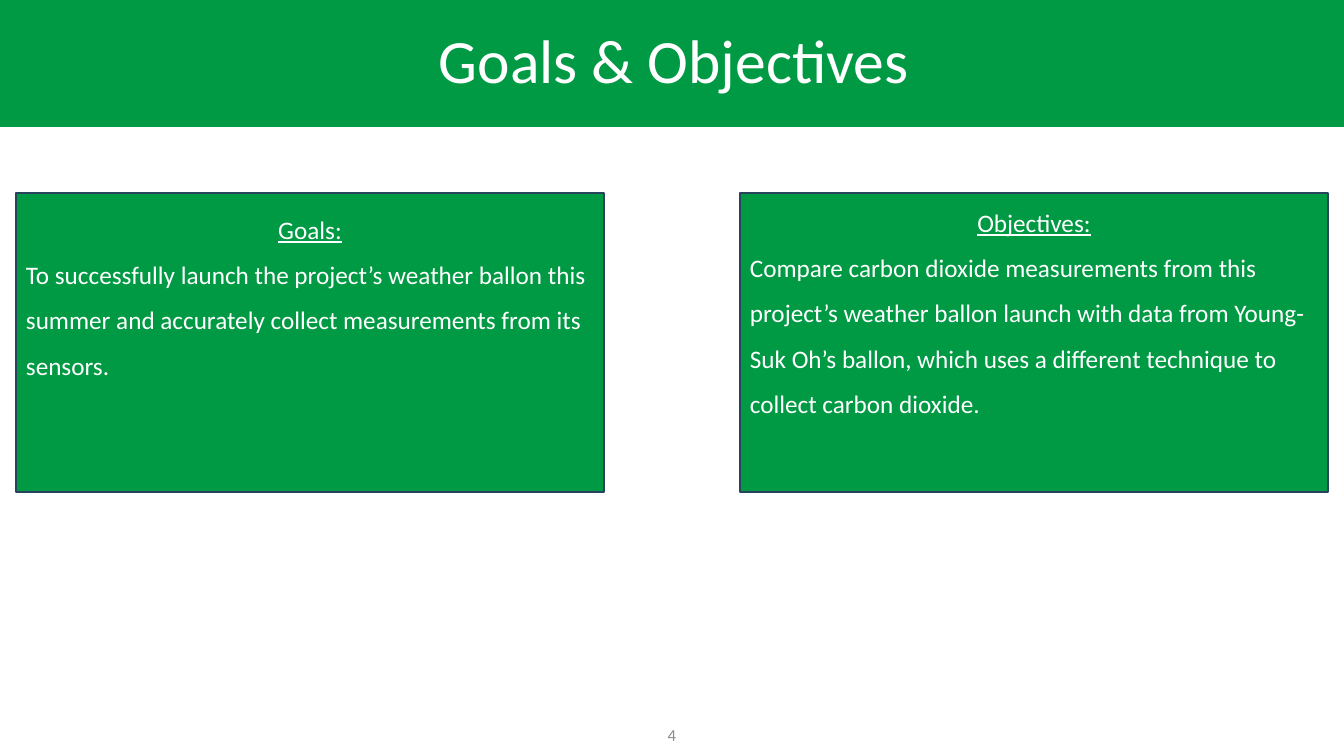
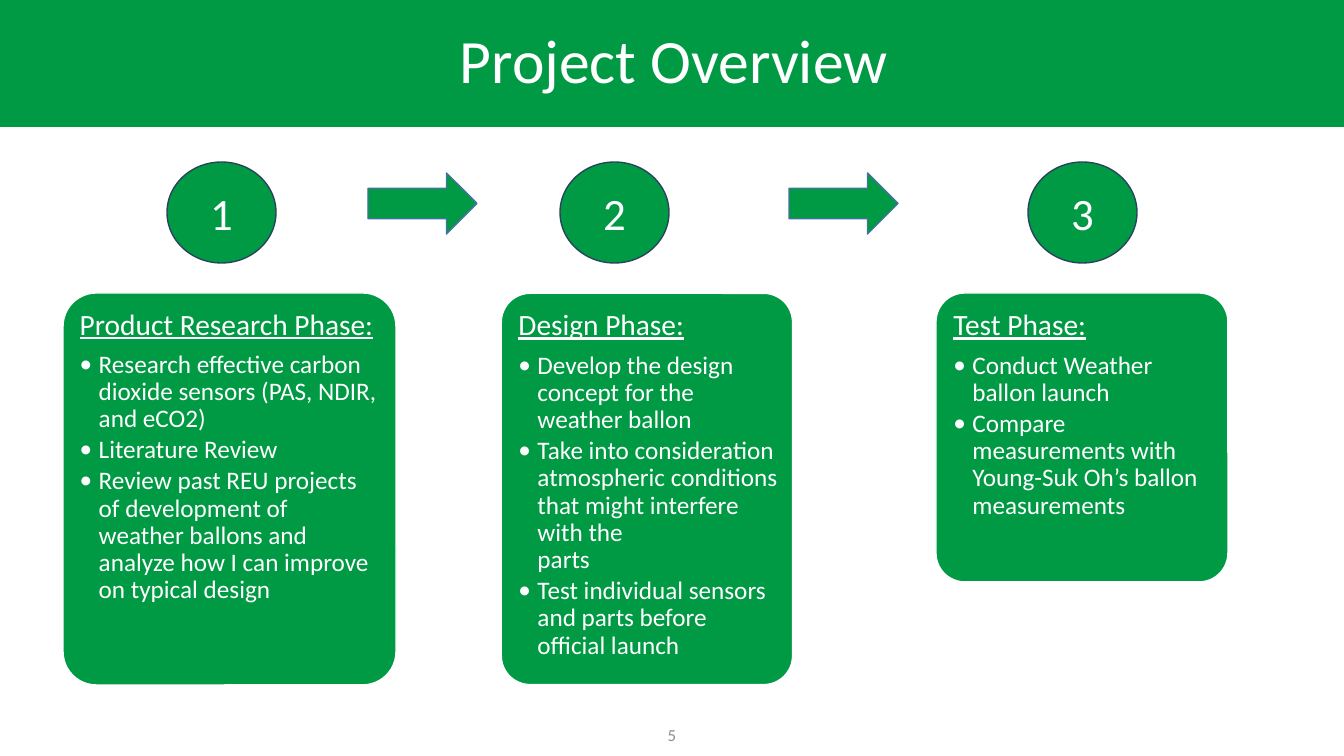
import pptx
import pptx.dml.color
import pptx.enum.shapes
import pptx.enum.text
import pptx.oxml.ns
import pptx.util
from lxml import etree

PX = 9071.43  # EMU in one px
FONT = "Calibri"
GREEN = pptx.dml.color.RGBColor(0x00, 0x9A, 0x44)
WHITE = pptx.dml.color.RGBColor(0xFF, 0xFF, 0xFF)
GREY = pptx.dml.color.RGBColor(0x8C, 0x8C, 0x8C)
NAVY = pptx.dml.color.RGBColor(0x28, 0x44, 0x5D)
BLUE = pptx.dml.color.RGBColor(0x43, 0x73, 0x9E)
SHAPE = pptx.enum.shapes.MSO_SHAPE
ANCHOR = pptx.enum.text.MSO_ANCHOR
LEFT = pptx.enum.text.PP_ALIGN.LEFT
CENTER = pptx.enum.text.PP_ALIGN.CENTER


def add_box(page, kind, bounds, line=None, line_width=1, anchor=ANCHOR.MIDDLE):
    """Add a green shape, or a text box when kind is None."""
    place = [pptx.util.Emu(round(value * PX)) for value in bounds]
    if kind is None:
        box = page.shapes.add_textbox(*place)
    else:
        box = page.shapes.add_shape(kind, *place)
        box.shadow.inherit = False
        box.fill.solid()
        box.fill.fore_color.rgb = GREEN
        if line is None:
            box.line.fill.background()
        else:
            box.line.color.rgb = line
            box.line.width = pptx.util.Pt(line_width)
    box.text_frame.word_wrap = True
    box.text_frame.vertical_anchor = anchor
    return box


def write(para, text, size, align=CENTER, color=WHITE, underline=False, spacing=1.0, after=0):
    para.text = text
    para.alignment = align
    para.line_spacing = spacing
    para.space_after = pptx.util.Pt(after)
    for span in para.runs:
        span.font.name = FONT
        span.font.size = pptx.util.Pt(size)
        span.font.color.rgb = color
        span.font.underline = underline


deck = pptx.Presentation()
deck.slide_width = pptx.util.Emu(round(1344 * PX))
deck.slide_height = pptx.util.Emu(round(756 * PX))

# Title band and page number on every slide
pages = []
for number, title in enumerate(["Goals & Objectives", "Project Overview"], 4):
    page = deck.slides.add_slide(deck.slide_layouts[6])
    add_box(page, SHAPE.RECTANGLE, (0, 0, 1344, 127))
    title_box = add_box(page, None, (42, 13, 1264, 101))
    write(title_box.text_frame.paragraphs[0], title, 44, spacing=0.9)
    number_box = add_box(page, None, (445, 715, 454, 40))
    write(number_box.text_frame.paragraphs[0], str(number), 12, color=GREY)
    pages.append(page)
goals_page, overview_page = pages

# Goals and objectives: left, top inset, heading, statement
statements = [
    (16, 21, "Goals:",
     "To successfully launch the project’s weather ballon this summer and accurately "
     "collect measurements from its sensors."),
    (740, 14, "Objectives:",
     "Compare carbon dioxide measurements from this project’s weather ballon launch with "
     "data from Young-Suk Oh’s ballon, which uses a different technique to collect "
     "carbon dioxide."),
]
for left, inset, heading, statement in statements:
    box = add_box(goals_page, SHAPE.RECTANGLE, (left, 193, 588, 299), NAVY, anchor=ANCHOR.TOP)
    frame = box.text_frame
    frame.margin_top = pptx.util.Emu(round(inset * PX))
    write(frame.paragraphs[0], heading, 18, underline=True)
    write(frame.add_paragraph(), statement, 18, LEFT, spacing=1.5)

# Arrows between the phases
for left in (368, 789):
    add_box(overview_page, SHAPE.RIGHT_ARROW, (left, 173, 109, 61), BLUE)

# Phases: circle left, card left, width, height, left and right inset, outline, heading, steps
phases = [
    (167, 63, 333, 392, 7, 9, 1, "Product Research Phase:", [
        "Research effective carbon dioxide sensors (PAS, NDIR, and eCO2)",
        "Literature Review",
        "Review past REU projects of development of weather ballons and analyze how "
        "I can improve on typical design"]),
    (560, 501, 292, 392, 9, 7, 1.5, "Design Phase:", [
        "Develop the design concept for the weather ballon",
        "Take into consideration atmospheric conditions that might interfere with the\vparts",
        "Test individual sensors and parts before official launch"]),
    (1028, 936, 292, 289, 9, 7, 1, "Test Phase:", [
        "Conduct Weather ballon launch",
        "Compare measurements with Young-Suk Oh’s ballon measurements"]),
]
for number, phase in enumerate(phases, 1):
    circle_left, left, width, height, inset, right_inset, outline, heading, steps = phase
    circle = add_box(overview_page, SHAPE.OVAL, (circle_left, 162, 109, 101), NAVY)
    write(circle.text_frame.paragraphs[0], str(number), 32)

    card = add_box(overview_page, SHAPE.ROUNDED_RECTANGLE, (left, 293, width, height),
                   WHITE, outline, ANCHOR.TOP)
    card.adjustments[0] = 0.1
    frame = card.text_frame
    frame.margin_left = frame.margin_top = pptx.util.Emu(round(inset * PX))
    frame.margin_right = pptx.util.Emu(round(right_inset * PX))
    write(frame.paragraphs[0], heading, 21, LEFT, underline=True, spacing=0.9, after=7.35)
    for step in steps:
        para = frame.add_paragraph()
        write(para, step, 18, LEFT, spacing=0.9, after=2.7)
        properties = para._p.get_or_add_pPr()
        properties.set("marL", str(round(19 * PX)))
        properties.set("indent", str(round(-19 * PX)))
        bullet_font = etree.SubElement(properties, pptx.oxml.ns.qn("a:buFont"))
        bullet_font.set("typeface", FONT)
        bullet = etree.SubElement(properties, pptx.oxml.ns.qn("a:buChar"))
        bullet.set("char", "•")

deck.save("out.pptx")
